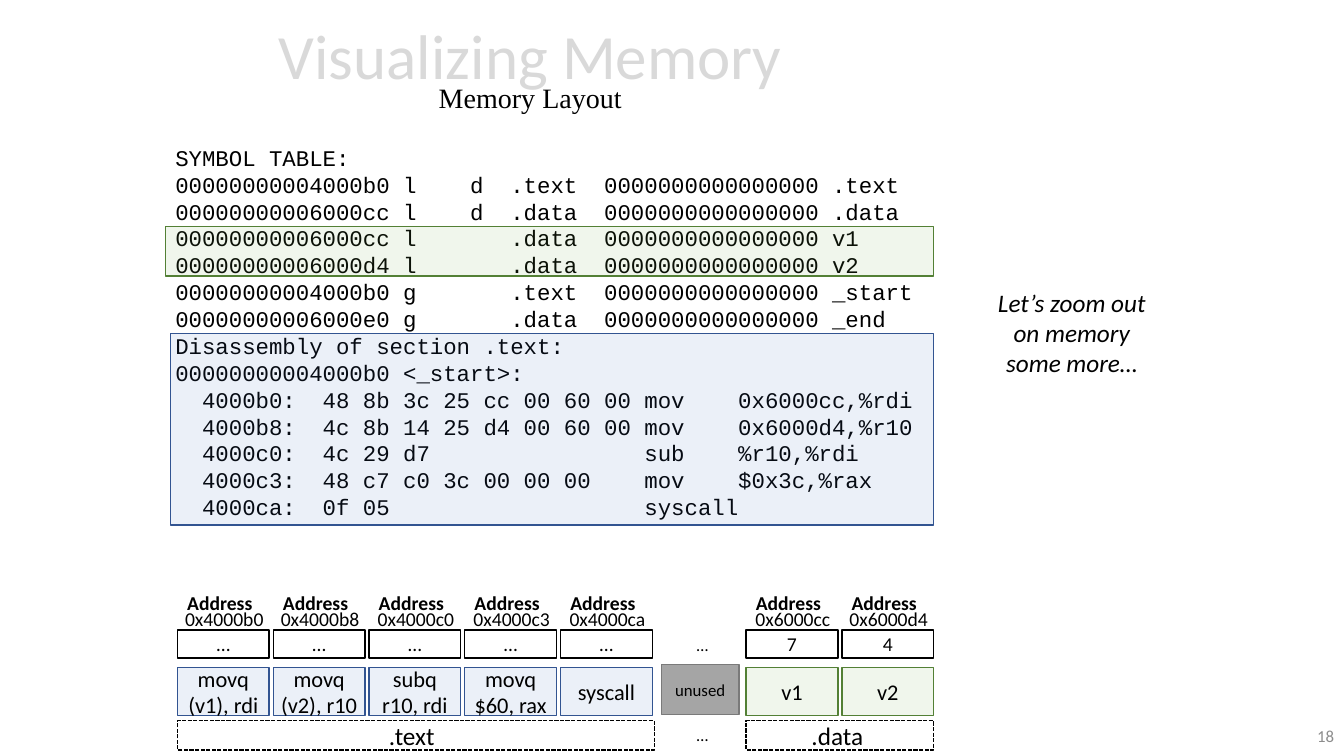
from lxml.etree import SubElement
from pptx import Presentation
from pptx.dml.color import RGBColor
from pptx.enum.dml import MSO_LINE
from pptx.enum.shapes import MSO_SHAPE
from pptx.enum.text import MSO_ANCHOR, PP_ALIGN
from pptx.oxml.ns import qn
from pptx.util import Inches, Pt

SLIDE_WIDTH, SLIDE_HEIGHT = 13.33, 7.5
BLACK, WHITE = "000000", "FFFFFF"
TEXT_SECTION = {"fill": "4472C4", "line": "325491", "opacity": 10}
DATA_SECTION = {"fill": "70AD47", "line": "538035", "opacity": 10}
UNUSED = {"fill": "A5A5A5", "line": "7A7A7A"}

LISTING = """SYMBOL TABLE:
00000000004000b0 l    d  .text  0000000000000000 .text
00000000006000cc l    d  .data  0000000000000000 .data
00000000006000cc l       .data  0000000000000000 v1
00000000006000d4 l       .data  0000000000000000 v2
00000000004000b0 g       .text  0000000000000000 _start
00000000006000e0 g       .data  0000000000000000 _end
Disassembly of section .text:
00000000004000b0 <_start>:
  4000b0:  48 8b 3c 25 cc 00 60 00 mov    0x6000cc,%rdi
  4000b8:  4c 8b 14 25 d4 00 60 00 mov    0x6000d4,%r10
  4000c0:  4c 29 d7                sub    %r10,%rdi
  4000c3:  48 c7 c0 3c 00 00 00    mov    $0x3c,%rax
  4000ca:  0f 05                   syscall"""

# Each section: name, left edge, width, label left, label width, colours,
# and its cells as (address, stored value, meaning)
SECTIONS = [
    (".text", 1.76, 4.73, 3.76, 0.67, TEXT_SECTION, [
        ("0x4000b0", "…", "movq\n(v1), rdi"),
        ("0x4000b8", "…", "movq\n(v2), r10"),
        ("0x4000c0", "…", "subq\nr10, rdi"),
        ("0x4000c3", "…", "movq\n$60, rax"),
        ("0x4000ca", "…", "syscall"),
    ]),
    (".data", 7.4, 1.86, 7.95, 0.72, DATA_SECTION, [
        ("0x6000cc", "7", "v1"),
        ("0x6000d4", "4", "v2"),
    ]),
]
CELL_PITCH, CELL_WIDTH = 0.95, 0.91
ADDRESS_TOP, VALUE_TOP, MEANING_TOP, SECTION_TOP = 5.81, 6.25, 6.62, 7.15

presentation = Presentation()
presentation.slide_width = Inches(SLIDE_WIDTH)
presentation.slide_height = Inches(SLIDE_HEIGHT)
slide = presentation.slides.add_slide(presentation.slide_layouts[6])


def color(hex_string):
    return RGBColor.from_string(hex_string)


def style_run(run, size, font, text_color, bold=False, italic=False):
    run.font.size = Pt(size)
    run.font.name = font
    run.font.color.rgb = color(text_color)
    run.font.bold = bold
    run.font.italic = italic


def write(shape, text, size=14, font="Calibri", text_color=BLACK, bold=False, italic=False,
          align=PP_ALIGN.CENTER, anchor=MSO_ANCHOR.TOP, wrap=True, margins=(0.1, 0.05)):
    """Fill a shape with text, one paragraph a line; margins are (side, top and bottom)."""
    frame = shape.text_frame
    frame.word_wrap = wrap
    frame.vertical_anchor = anchor
    frame.margin_left = frame.margin_right = Inches(margins[0])
    frame.margin_top = frame.margin_bottom = Inches(margins[1])
    for index, line in enumerate(text.split("\n")):
        paragraph = frame.add_paragraph() if index else frame.paragraphs[0]
        paragraph.alignment = align
        run = paragraph.add_run()
        run.text = line
        style_run(run, size, font, text_color, bold, italic)


def add_text(left, top, width, height, text, parent=slide, **text_format):
    box = parent.shapes.add_textbox(*map(Inches, (left, top, width, height)))
    write(box, text, **text_format)
    return box


def add_box(left, top, width, height, fill=None, line=BLACK, opacity=100, dash=None):
    box = slide.shapes.add_shape(MSO_SHAPE.RECTANGLE, *map(Inches, (left, top, width, height)))
    box.shadow.inherit = False
    box.line.color.rgb = color(line)
    box.line.width = Pt(1)
    if dash:
        box.line.dash_style = dash
    if fill:
        box.fill.solid()
        box.fill.fore_color.rgb = color(fill)
        if opacity < 100:
            fill_color = box._element.spPr.find(qn("a:solidFill"))[0]
            SubElement(fill_color, qn("a:alpha")).set("val", str(opacity * 1000))
    else:
        box.fill.background()
    return box


def add_title():
    box = add_text(0.26, 0.02, 10, 1.45, "Visualizing Memory", size=45,
                   text_color="D9D9D9", anchor=MSO_ANCHOR.MIDDLE)
    paragraph = box.text_frame.paragraphs[0]
    paragraph.line_spacing = 0.7
    paragraph.add_line_break()
    subtitle = paragraph.add_run()
    subtitle.text = "Memory Layout"
    style_run(subtitle, 20, "Times New Roman", BLACK)


def add_cell(left, address, value, meaning, colors):
    group = slide.shapes.add_group_shape()
    narrow = {"parent": group, "margins": (0, 0.05)}
    add_text(left + 0.03, ADDRESS_TOP, 0.78, 0.34, "Address", bold=True, **narrow)
    add_text(left - 0.04, ADDRESS_TOP + 0.16, 1.01, 0.34, address, **narrow)
    write(add_box(left, VALUE_TOP, CELL_WIDTH, 0.28, fill=WHITE), value,
          anchor=MSO_ANCHOR.MIDDLE, margins=(0, 0.05))
    write(add_box(left, MEANING_TOP, CELL_WIDTH, 0.48, **colors), meaning,
          size=16, anchor=MSO_ANCHOR.MIDDLE, margins=(0, 0))


add_title()
add_text(SLIDE_WIDTH - 3, SLIDE_HEIGHT - 0.4, 3, 0.4, "18", size=12, text_color="8C8C8C",
         align=PP_ALIGN.RIGHT, anchor=MSO_ANCHOR.MIDDLE)

add_text(1.64, 1.38, 7.76, 3.87, LISTING, size=16, font="Courier New",
         align=PP_ALIGN.LEFT, wrap=False)
add_box(1.64, 2.25, 7.62, 0.49, **DATA_SECTION)
add_box(1.69, 3.31, 7.57, 1.9, **TEXT_SECTION)
add_text(9.79, 2.8, 1.68, 1.01, "Let’s zoom out\non memory\nsome more…", size=18,
         italic=True, wrap=False)

for name, left, width, label_left, label_width, colors, cells in SECTIONS:
    add_box(left, SECTION_TOP, width, 0.29, dash=MSO_LINE.SQUARE_DOT)
    add_text(label_left, SECTION_TOP - 0.05, label_width, 0.4, name, size=18,
             align=PP_ALIGN.LEFT, wrap=False)
    for column, cell in enumerate(cells):
        add_cell(left + column * CELL_PITCH, *cell, colors)

for gap_top in (VALUE_TOP, SECTION_TOP - 0.01):
    add_text(6.81, gap_top, 0.32, 0.3, "…", size=12, align=PP_ALIGN.LEFT, wrap=False)
write(add_box(6.56, 6.59, 0.77, 0.5, **UNUSED), "unused", size=12,
      anchor=MSO_ANCHOR.MIDDLE, margins=(0, 0.05))

presentation.save("out.pptx")
